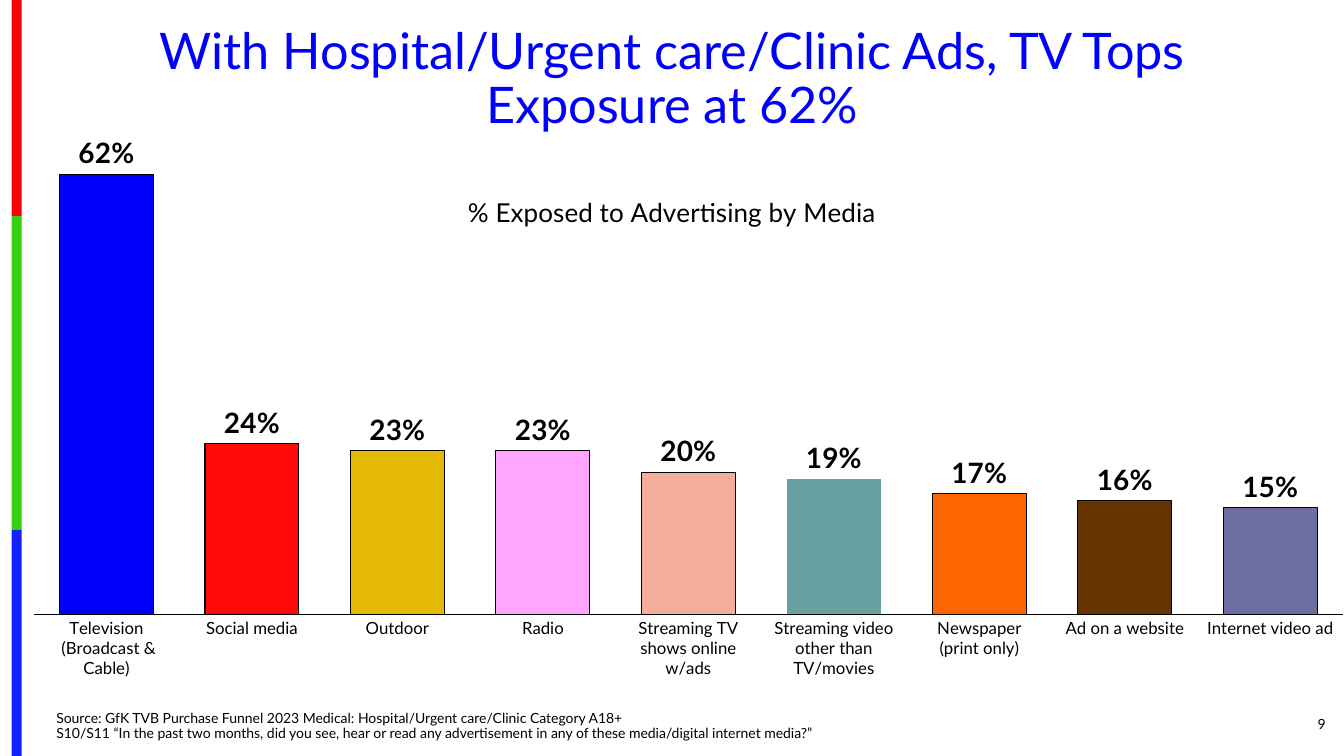
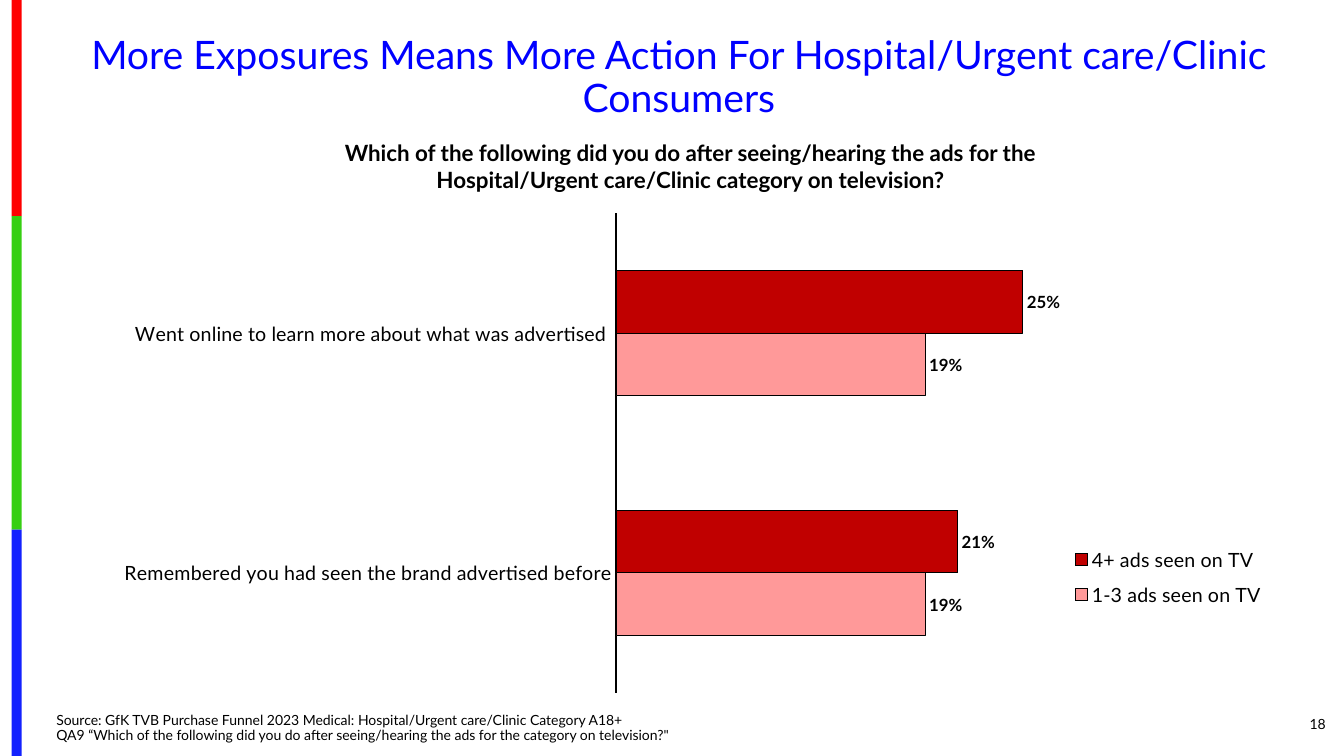
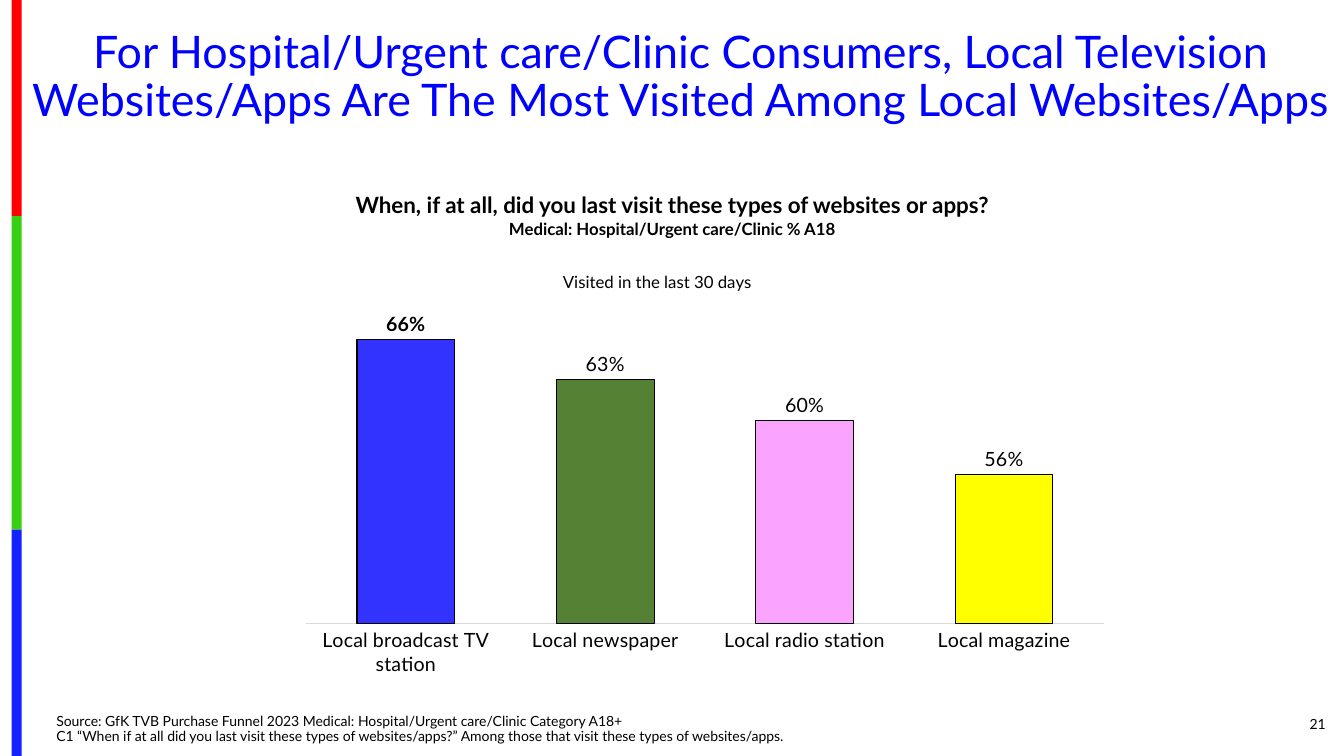
from dataclasses import dataclass, field
from itertools import pairwise
from typing import NamedTuple

from lxml import etree
from pptx import Presentation
from pptx import util as u
from pptx.chart.data import CategoryChartData
from pptx.dml.color import RGBColor
from pptx.enum import chart as ch, shapes, text
from pptx.oxml.ns import qn

FONT = "Lato"
COLORS = {
    "black": "000000", "title": "0000FF", "light_gray": "D9D9D9",
    "band_red": "FE0000", "band_green": "36CF12", "band_blue": "1322FE",
    "blue": "0000FF", "red": "FF0A07", "gold": "E3B905", "pink": "FFA4FF",
    "salmon": "F5AE99", "teal": "67A1A1", "orange": "FF6600",
    "brown": "663200", "violet": "6E6EA2",
    "dark_red": "C00000", "rose": "FF9999",
    "royal": "3333FF", "green": "548134", "orchid": "FAA4FF", "yellow": "FFFF00",
}
SLIDE_W, SLIDE_H = u.Inches(40 / 3), u.Inches(7.5)
BAND_EDGES = (0, 28.6, 70.07, 100)
SOURCE = "Source: GfK TVB Purchase Funnel 2023 Medical: Hospital/Urgent care/Clinic Category A18+"


class Box(NamedTuple):
    """Left, top, width and height in percent of the enclosing area."""
    x: float
    y: float
    w: float
    h: float

    def on_slide(self) -> tuple[int, int, int, int]:
        return (int(SLIDE_W * self.x / 100), int(SLIDE_H * self.y / 100),
                int(SLIDE_W * self.w / 100), int(SLIDE_H * self.h / 100))


NUMBER_BOX = Box(91.28, 93.07, 8.1, 5.33)


class Line(NamedTuple):
    text: str
    size: float
    bold: bool = False


class Series(NamedTuple):
    name: str
    values: tuple[float, ...]
    color: str
    point_colors: tuple[str, ...] = ()


class ChartTitle(NamedTuple):
    text: str
    size: float
    x: float
    y: float


@dataclass
class BarChart:
    kind: ch.XL_CHART_TYPE
    box: Box
    plot: Box
    categories: tuple[str, ...]
    series: tuple[Series, ...]
    low: float
    high: float
    gap: int
    overlap: int
    axis_size: float
    label_size: float
    label_bold: bool = True
    axis_color: str = "black"
    axis_width: float = 0.75
    title: ChartTitle | None = None
    legend: Box | None = None
    bold_points: tuple[int, ...] = ()
    unlined_points: tuple[int, ...] = ()


@dataclass
class Page:
    number: int
    title: Line
    title_box: Box
    question: str
    source_box: Box
    chart: BarChart
    heading: tuple[Line, ...] = ()
    heading_box: Box = field(default=Box(0, 0, 0, 0))


def rgb(name: str) -> RGBColor:
    return RGBColor.from_string(COLORS[name])


def style(font, size: float, bold: bool = False, color: str = "black") -> None:
    font.name, font.size, font.bold = FONT, u.Pt(size), bold
    font.color.rgb = rgb(color)


def write(sp, lines, align, anchor, color="black", spacing=None, wrap=True) -> None:
    tf = sp.text_frame
    tf.text = "\n".join(line.text for line in lines)
    tf.word_wrap, tf.auto_size = wrap, text.MSO_AUTO_SIZE.NONE
    tf.vertical_anchor = anchor
    for p, line in zip(tf.paragraphs, lines):
        p.alignment, p.line_spacing = align, spacing
        for r in p.runs:
            style(r.font, line.size, line.bold, color)


def add_bands(layout, slide) -> None:
    """Draw the colour bands and move them to the layout, where all slides share them."""
    names = ("band_red", "band_green", "band_blue")
    for name, (top, bottom) in zip(names, pairwise(BAND_EDGES)):
        band = slide.shapes.add_shape(shapes.MSO_SHAPE.RECTANGLE,
                                      *Box(0.86, top, 0.75, bottom - top).on_slide())
        band.shadow.inherit = False
        band.fill.solid()
        band.fill.fore_color.rgb = rgb(name)
        band.line.fill.background()
        layout.shapes.element.append(band.element)


def place(part, x: float, y: float, w: float = 0, h: float = 0, inner: bool = False) -> None:
    """Give a chart part a manual layout, in percent of the chart."""
    for old in part.findall(qn("c:layout")):
        part.remove(old)
    layout = etree.Element(qn("c:layout"))
    manual = etree.SubElement(layout, qn("c:manualLayout"))
    settings = [("layoutTarget", "inner")] if inner else []
    settings += [("xMode", "edge"), ("yMode", "edge"), ("x", x / 100), ("y", y / 100)]
    if w:
        settings += [("w", w / 100), ("h", h / 100)]
    for tag, value in settings:
        etree.SubElement(manual, qn(f"c:{tag}")).set("val", str(value))
    overlay = part.find(qn("c:overlay"))
    if overlay is None:
        part.insert(0, layout)
    else:
        overlay.addprevious(layout)


def outline(fmt, color: str) -> None:
    fmt.fill.solid()
    fmt.fill.fore_color.rgb = rgb(color)
    fmt.line.color.rgb = rgb("black")
    fmt.line.width = u.Pt(0.75)


def format_axes(chart, c: BarChart) -> None:
    axis = chart.category_axis
    axis.major_tick_mark = axis.minor_tick_mark = ch.XL_TICK_MARK.NONE
    axis.has_major_gridlines = False
    style(axis.tick_labels.font, c.axis_size)
    axis.format.line.color.rgb = rgb(c.axis_color)
    axis.format.line.width = u.Pt(c.axis_width)
    values = chart.value_axis
    values.visible = values.has_major_gridlines = False
    values.minimum_scale, values.maximum_scale = c.low, c.high


def format_series(series, c: BarChart, item: Series) -> None:
    outline(series.format, item.color and item.color)
    series.invert_if_negative = False
    for i, color in enumerate(item.point_colors):
        point = series.points[i]
        outline(point.format, color)
        if i in c.unlined_points:
            point.format.line.fill.background()
    labels = series.data_labels
    labels.show_value = True
    labels.number_format, labels.number_format_is_linked = "0%", False
    labels.position = ch.XL_LABEL_POSITION.OUTSIDE_END
    style(labels.font, c.label_size, c.label_bold)
    for i in c.bold_points:
        label = series.points[i].data_label
        style(label.font, c.label_size, True)
        label.position = ch.XL_LABEL_POSITION.OUTSIDE_END


def add_bar_chart(slide, c: BarChart) -> None:
    data = CategoryChartData(number_format="0%")
    data.categories = c.categories
    for item in c.series:
        data.add_series(item.name, item.values)
    chart = slide.shapes.add_chart(c.kind, *c.box.on_slide(), data).chart
    style(chart.font, 10)
    format_axes(chart, c)
    plot = chart.plots[0]
    plot.gap_width, plot.overlap, plot.vary_by_categories = c.gap, c.overlap, False
    for series, item in zip(plot.series, c.series):
        format_series(series, c, item)
    place(chart.element.find(".//" + qn("c:plotArea")), *c.plot, inner=True)
    chart.has_title = c.title is not None
    if c.title:
        tf = chart.chart_title.text_frame
        tf.text = c.title.text
        style(tf.paragraphs[0].runs[0].font, c.title.size)
        place(chart.element.find(".//" + qn("c:title")), c.title.x, c.title.y)
    chart.has_legend = c.legend is not None
    if c.legend:
        chart.legend.position = ch.XL_LEGEND_POSITION.RIGHT
        chart.legend.include_in_layout = False
        style(chart.legend.font, 14)
        place(chart.element.find(".//" + qn("c:legend")), *c.legend)


def add_page(prs, layout, page: Page):
    slide = prs.slides.add_slide(layout)
    align, anchor = text.PP_ALIGN, text.MSO_ANCHOR
    title = slide.shapes.title
    title.left, title.top, title.width, title.height = page.title_box.on_slide()
    write(title, [page.title], align.CENTER, anchor.MIDDLE, "title", 0.9)
    add_bar_chart(slide, page.chart)
    if page.heading:
        heading = slide.shapes.add_textbox(*page.heading_box.on_slide())
        write(heading, page.heading, align.CENTER, anchor.TOP, wrap=False)
    number = slide.shapes.add_textbox(*NUMBER_BOX.on_slide())
    write(number, [Line(str(page.number), 10)], align.RIGHT, anchor.MIDDLE)
    source = slide.shapes.add_textbox(*page.source_box.on_slide())
    write(source, [Line(f"{SOURCE}\v{page.question}", 10)], align.LEFT, anchor.BOTTOM,
          spacing=0.9)
    return slide


PAGES = (
    Page(
        number=9,
        title=Line("With Hospital/Urgent care/Clinic Ads, TV Tops Exposure at 62%", 36),
        title_box=Box(3.45, 2.67, 93.15, 15.87),
        question="S10/S11 “In the past two months, did you see, hear or read any "
                 "advertisement in any of these media/digital internet media?”",
        source_box=Box(3.45, 93.47, 79.72, 5.33),
        chart=BarChart(
            kind=ch.XL_CHART_TYPE.COLUMN_CLUSTERED,
            box=Box(2.47, 13.47, 97.5, 76.4), plot=Box(0, 2.7, 100, 86),
            categories=("Television\n (Broadcast & Cable)", "Social media", "Outdoor", "Radio",
                        "Streaming TV\nshows online w/ads",
                        "Streaming video other than TV/movies", "Newspaper\n(print only)",
                        "Ad on a website", "Internet video ad"),
            series=(Series("Series 1",
                           (0.62, 0.24, 0.23, 0.23, 0.2, 0.19, 0.17, 0.16, 0.15), "royal",
                           ("blue", "red", "gold", "pink", "salmon", "teal", "orange",
                            "brown", "violet")),),
            low=0, high=0.7, gap=55, overlap=-30, axis_size=12, label_size=20,
            title=ChartTitle("% Exposed to Advertising by Media", 18.6, 32.8, 15),
            unlined_points=(5,)),
    ),
    Page(
        number=18,
        title=Line("More Exposures Means More Action For Hospital/Urgent care/Clinic "
                   "Consumers", 28),
        title_box=Box(1.05, 4, 98.93, 12.67),
        question="QA9 “Which of the following did you do after seeing/hearing the ads for "
                 "the category on television?\"",
        source_box=Box(3.45, 93.73, 70.88, 5.33),
        heading=(Line("Which of the following did you do after seeing/hearing the ads for the",
                      16, True),
                 Line("Hospital/Urgent care/Clinic category on television?", 16, True)),
        heading_box=Box(20.63, 17.73, 61.5, 8.53),
        chart=BarChart(
            kind=ch.XL_CHART_TYPE.BAR_CLUSTERED,
            box=Box(4.65, 26.4, 91.95, 67.07), plot=Box(44.8, 2.7, 39.5, 94.6),
            categories=("Remembered you had seen the brand advertised before",
                        "Went online to learn more about what was advertised "),
            series=(Series("1-3 ads seen on TV", (0.19, 0.19), "rose"),
                    Series("4+ ads seen on TV", (0.21, 0.25), "dark_red")),
            low=0, high=0.3, gap=182, overlap=0, axis_size=14, label_size=12,
            axis_width=1, legend=Box(81, 66.5, 17, 16)),
    ),
    Page(
        number=21,
        title=Line("For Hospital/Urgent care/Clinic Consumers, Local Television Websites/Apps "
                   "Are The Most Visited Among Local Websites/Apps", 32),
        title_box=Box(1.28, 3.2, 98.78, 14.27),
        question="C1 “When if at all did you last visit these types of websites/apps?” "
                 "Among those that visit these types of websites/apps.",
        source_box=Box(3.45, 93.87, 70.88, 5.33),
        heading=(Line("When, if at all, did you last visit these types of websites or apps?",
                      16, True),
                 Line("Medical: Hospital/Urgent care/Clinic % A18", 12, True)),
        heading_box=Box(21.83, 24.67, 56.4, 7.6),
        chart=BarChart(
            kind=ch.XL_CHART_TYPE.COLUMN_CLUSTERED,
            box=Box(16.65, 34.67, 66.68, 54.93), plot=Box(9.2, 5.6, 89, 81.4),
            categories=("Local broadcast TV station", "Local newspaper",
                        "Local radio station", "Local magazine"),
            series=(Series("Visited in the last 30 days", (0.66, 0.63, 0.6, 0.56), "royal",
                           ("royal", "green", "orchid", "yellow")),),
            low=0.45, high=0.7, gap=104, overlap=-27, axis_size=14, label_size=14,
            label_bold=False, axis_color="light_gray",
            title=ChartTitle("Visited in the last 30 days", 12, 37.5, 1),
            bold_points=(0,)),
    ),
)


def main() -> None:
    prs = Presentation()
    prs.slide_width, prs.slide_height = SLIDE_W, SLIDE_H
    layout = prs.slide_layouts.get_by_name("Title Only")
    slides = [add_page(prs, layout, page) for page in PAGES]
    add_bands(layout, slides[0])
    prs.save("out.pptx")


if __name__ == "__main__":
    main()
